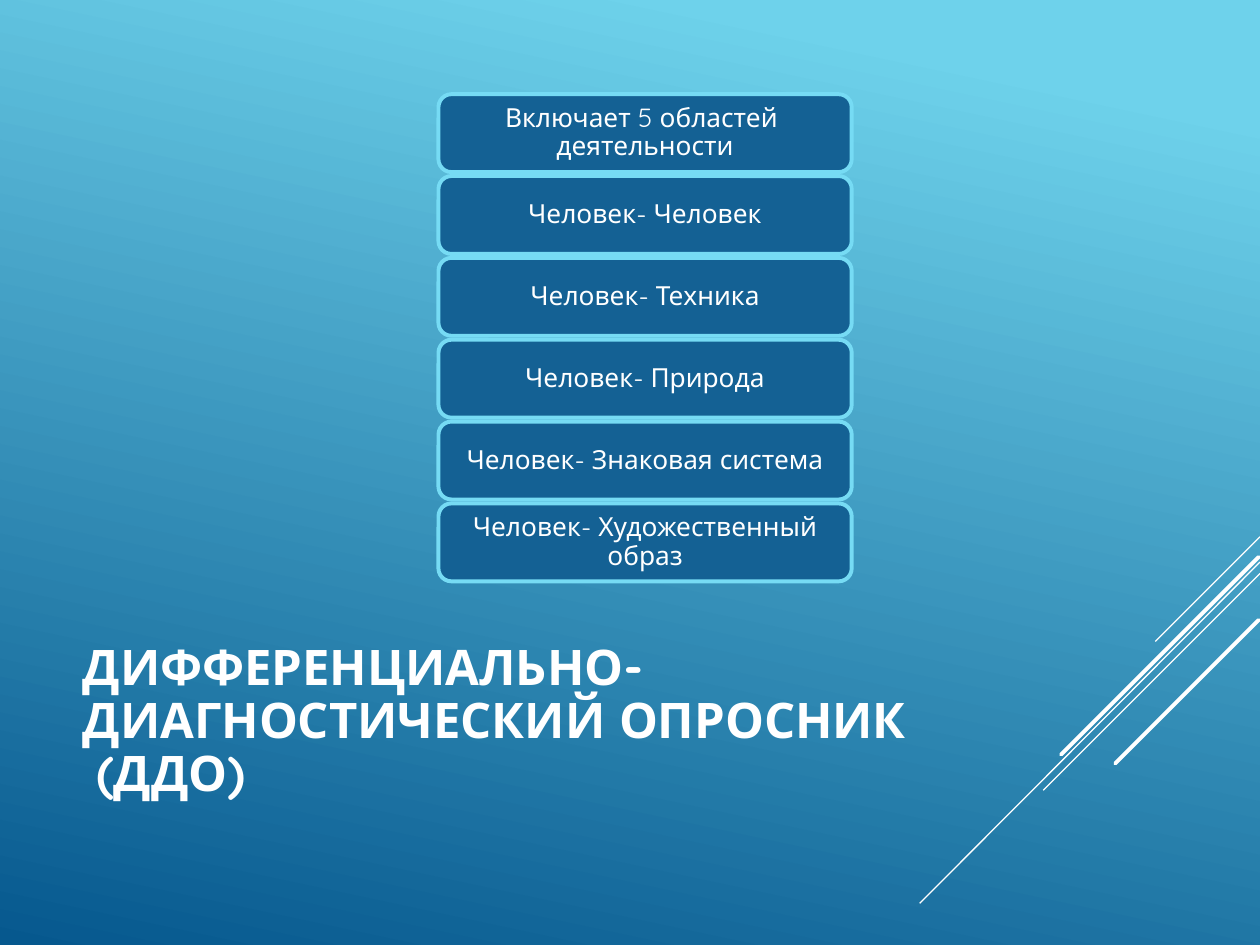
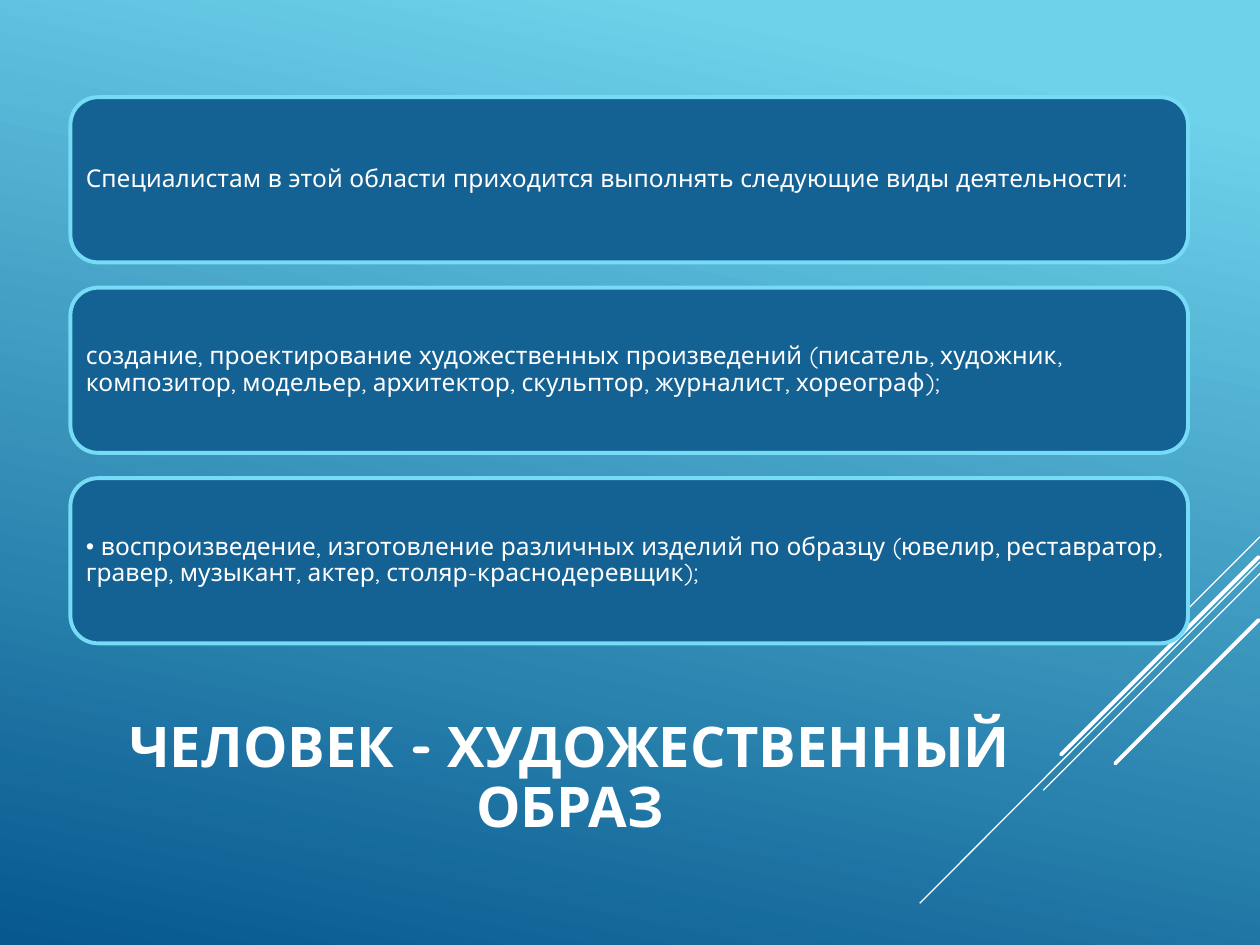
from dataclasses import dataclass

import lxml.etree
import pptx
import pptx.dml.color
import pptx.enum.shapes
import pptx.enum.text
import pptx.oxml.ns
import pptx.presentation
import pptx.shapes.base
import pptx.slide
import pptx.text.text
import pptx.util
from pptx.util import Cm

# Shared style
COLORS = {
    "sky": "6ED2EB",
    "deep": "06588E",
    "card": "146194",
    "border": "76DBF4",
    "white": "FFFFFF",
}
FONT = "Quicksand"
LINE_SPACING = 0.9
GRADIENT_ANGLE = 258
GRADIENT_STOPS = (("sky", 0.1), ("deep", 1.0))
THIN, THICK = 0.75, 2.25

Align = pptx.enum.text.PP_ALIGN
Anchor = pptx.enum.text.MSO_ANCHOR


@dataclass(frozen=True)
class Ray:
    """Diagonal line in the lower right corner, in centimetres."""
    start: tuple[float, float]
    end: tuple[float, float]
    width: float


@dataclass(frozen=True)
class Title:
    text: str
    box: tuple[float, float, float, float]
    size: int
    align: Align
    anchor: Anchor
    bottom_inset: float


@dataclass(frozen=True)
class CardStack:
    """Equal cards, one below the other, in centimetres."""
    texts: tuple[str, ...]
    left: float
    top: float
    width: float
    height: float
    pitch: float
    size: int
    align: Align
    side_inset: float
    edge_inset: float


RAYS = (
    Ray((25.4, 10.82), (23.29, 12.93), THIN),
    Ray((25.4, 11.33), (18.54, 18.21), THIN),
    Ray((25.4, 11.56), (21.03, 15.93), THIN),
    Ray((25.37, 11.23), (21.39, 15.21), THICK),
    Ray((25.37, 12.5), (22.48, 15.39), THICK),
)

# Slide contents
SLIDES = (
    (
        Title("ДИФФЕРЕНЦИАЛЬНО-ДИАГНОСТИЧЕСКИЙ ОПРОСНИК\v (ДДО)",
              (1.42, 12.47, 17.78, 4.19), 28, Align.LEFT, Anchor.MIDDLE, 0.13),
        CardStack(
            ("Включает 5 областей  деятельности",
             "Человек- Человек",
             "Человек- Техника",
             "Человек- Природа",
             "Человек- Знаковая система",
             "Человек- Художественный образ"),
            left=8.84, top=1.9, width=8.33, height=1.57, pitch=1.65,
            size=15, align=Align.CENTER, side_inset=0.15, edge_inset=0.08),
    ),
    (
        Title("ЧЕЛОВЕК - ХУДОЖЕСТВЕННЫЙ ОБРАЗ",
              (1.42, 16.26, 20.14, 1.35), 32, Align.CENTER, Anchor.BOTTOM, 0.68),
        CardStack(
            ("Специалистам в этой области приходится выполнять следующие виды "
             "деятельности:",
             "создание, проектирование художественных произведений (писатель, "
             "художник, композитор, модельер, архитектор, скульптор, журналист, "
             "хореограф);",
             "• воспроизведение, изготовление различных изделий по образцу "
             "(ювелир, реставратор, гравер, музыкант, актер, "
             "столяр-краснодеревщик);"),
            left=1.42, top=1.96, width=22.53, height=3.33, pitch=3.84,
            size=14, align=Align.LEFT, side_inset=0.15, edge_inset=0.15),
    ),
)


def color(name: str) -> pptx.dml.color.RGBColor:
    return pptx.dml.color.RGBColor.from_string(COLORS[name])


def set_attributes(target: object, values: dict[str, object]) -> None:
    for name, value in values.items():
        setattr(target, name, value)


def write_text(frame: pptx.text.text.TextFrame, text: str, size: int,
               bold: bool, align: Align, frame_format: dict[str, object]) -> None:
    set_attributes(frame, {"word_wrap": True, **frame_format})
    paragraph = frame.paragraphs[0]
    paragraph.text = text
    set_attributes(paragraph, {"alignment": align, "line_spacing": LINE_SPACING})
    for run in paragraph.runs:
        set_attributes(run.font, {"name": FONT, "size": pptx.util.Pt(size), "bold": bold})
        run.font.color.rgb = color("white")


def paint_background(slide: pptx.slide.Slide) -> None:
    fill = slide.background.fill
    fill.gradient()
    fill.gradient_angle = GRADIENT_ANGLE
    for stop, (name, position) in zip(fill.gradient_stops, GRADIENT_STOPS):
        stop.color.rgb = color(name)
        stop.position = position


def draw_ray(slide: pptx.slide.Slide, ray: Ray) -> None:
    connector = slide.shapes.add_connector(
        pptx.enum.shapes.MSO_CONNECTOR.STRAIGHT,
        *(Cm(value) for value in ray.start + ray.end))
    connector.line.color.rgb = color("white")
    connector.line.width = pptx.util.Pt(ray.width)
    properties = connector._element.spPr
    if ray.width == THICK:
        properties.find(pptx.oxml.ns.qn("a:ln")).set("cap", "rnd")
    lxml.etree.SubElement(properties, pptx.oxml.ns.qn("a:effectLst"))


def draw_title(slide: pptx.slide.Slide, title: Title) -> None:
    shape = slide.shapes.add_textbox(*(Cm(value) for value in title.box))
    write_text(shape.text_frame, title.text, title.size, True, title.align, {
        "vertical_anchor": title.anchor,
        "margin_bottom": Cm(title.bottom_inset),
    })


def draw_cards(slide: pptx.slide.Slide, stack: CardStack) -> None:
    for index, text in enumerate(stack.texts):
        shape = slide.shapes.add_shape(
            pptx.enum.shapes.MSO_SHAPE.ROUNDED_RECTANGLE,
            Cm(stack.left), Cm(stack.top + index * stack.pitch),
            Cm(stack.width), Cm(stack.height))
        shape.shadow.inherit = False
        shape.fill.solid()
        shape.fill.fore_color.rgb = color("card")
        shape.line.color.rgb = color("border")
        shape.line.width = pptx.util.Pt(THICK)
        write_text(shape.text_frame, text, stack.size, False, stack.align, {
            "vertical_anchor": Anchor.MIDDLE,
            "margin_left": Cm(stack.side_inset),
            "margin_right": Cm(stack.side_inset),
            "margin_top": Cm(stack.edge_inset),
            "margin_bottom": Cm(stack.edge_inset),
        })


def main() -> None:
    presentation = pptx.Presentation()
    set_attributes(presentation, {"slide_width": Cm(25.4), "slide_height": Cm(19.05)})
    blank_layout = presentation.slide_layouts[6]
    for title, stack in SLIDES:
        slide = presentation.slides.add_slide(blank_layout)
        paint_background(slide)
        for ray in RAYS:
            draw_ray(slide, ray)
        draw_title(slide, title)
        draw_cards(slide, stack)
    presentation.save("out.pptx")


if __name__ == "__main__":
    main()
